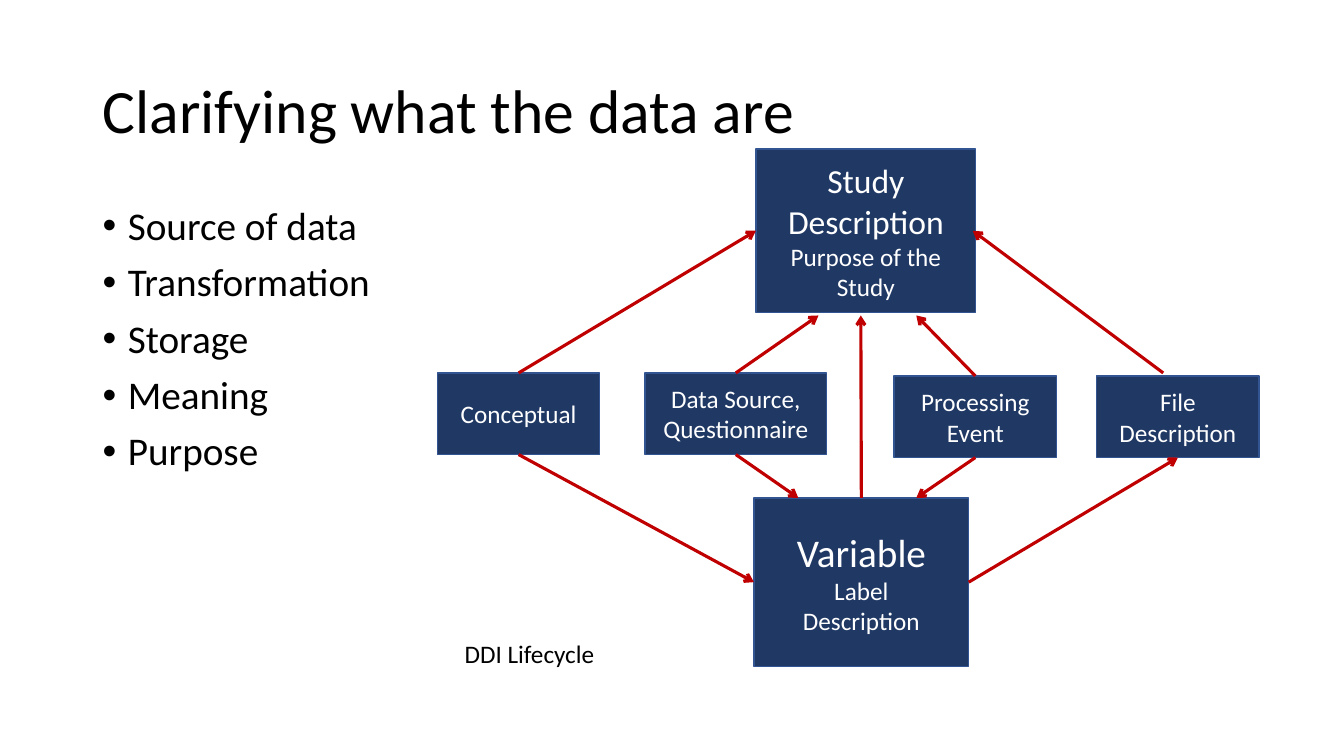
from dataclasses import dataclass
from typing import NamedTuple

from lxml import etree
from pptx import Presentation
from pptx.dml.color import RGBColor
from pptx.enum.shapes import MSO_CONNECTOR, MSO_SHAPE
from pptx.enum.text import MSO_ANCHOR, MSO_AUTO_SIZE, PP_ALIGN
from pptx.oxml.ns import qn
from pptx.util import Inches, Pt

RECTANGLE = MSO_SHAPE.RECTANGLE
STRAIGHT = MSO_CONNECTOR.STRAIGHT
TOP_ANCHOR, MIDDLE_ANCHOR = MSO_ANCHOR.TOP, MSO_ANCHOR.MIDDLE
CENTER, LEFT_ALIGN = PP_ALIGN.CENTER, PP_ALIGN.LEFT
FIT_SHAPE = MSO_AUTO_SIZE.SHAPE_TO_FIT_TEXT
TOP, LEFT, BOTTOM, RIGHT = range(4)

SLIDE_WIDTH, SLIDE_HEIGHT = Inches(13.333), Inches(7.5)


@dataclass(frozen=True)
class Theme:
    font: str = "Calibri"
    ink: RGBColor = RGBColor(0x00, 0x00, 0x00)
    box_ink: RGBColor = RGBColor(0xFF, 0xFF, 0xFF)
    box_fill: RGBColor = RGBColor(0x20, 0x38, 0x64)
    box_edge: RGBColor = RGBColor(0x32, 0x54, 0x91)
    arrow: RGBColor = RGBColor(0xC0, 0x00, 0x00)
    title_size: int = 44
    body_size: int = 28
    heading_size: int = 24
    label_size: int = 18
    edge_width: float = 1
    arrow_width: float = 2.25


THEME = Theme()


class Area(NamedTuple):
    """Left, top, width and height in percent of the slide."""
    left: float
    top: float
    width: float
    height: float


class Line(NamedTuple):
    text: str
    size: int = THEME.label_size


class Box(NamedTuple):
    area: Area
    lines: list[Line]


class Point(NamedTuple):
    """A free arrow end in percent of the slide."""
    x: float
    y: float


class Joint(NamedTuple):
    """An arrow end at the middle of a box side."""
    box: str
    side: int


class Arrow(NamedTuple):
    start: Point | Joint
    end: Point | Joint


# Diagram: four middle boxes between the study and the variable
LEFT_ROW, RIGHT_ROW = 49.33, 49.73
BOX_WIDTH, BOX_HEIGHT = 12.08, 10.8
UNDER_STUDY, VARIABLE_TOP, STUDY_MIDDLE = 41.73, 65.87, 30.53

BOXES = {
    "variable": Box(Area(56.1, VARIABLE_TOP, 15.98, 22.27),
                    [Line("Variable", THEME.body_size), Line("Label"), Line("Description")]),
    "study": Box(Area(56.25, 19.73, 16.35, 21.6),
                 [Line("Study Description", THEME.heading_size), Line("Purpose of the Study")]),
    "conceptual": Box(Area(32.55, LEFT_ROW, BOX_WIDTH, BOX_HEIGHT), [Line("Conceptual")]),
    "source": Box(Area(48, LEFT_ROW, 13.5, BOX_HEIGHT), [Line("Data Source, Questionnaire")]),
    "processing": Box(Area(66.53, RIGHT_ROW, BOX_WIDTH, BOX_HEIGHT), [Line("Processing Event")]),
    "file": Box(Area(81.6, RIGHT_ROW, BOX_WIDTH, BOX_HEIGHT), [Line("File Description")]),
}

ARROWS = [
    Arrow(Joint("conceptual", TOP), Joint("study", LEFT)),
    Arrow(Joint("source", TOP), Point(60.9, UNDER_STUDY)),
    Arrow(Joint("variable", TOP), Point(64.05, UNDER_STUDY)),
    Arrow(Joint("processing", TOP), Point(68.18, UNDER_STUDY)),
    Arrow(Point(86.55, LEFT_ROW), Point(72.38, STUDY_MIDDLE)),
    Arrow(Joint("conceptual", BOTTOM), Joint("variable", LEFT)),
    Arrow(Joint("source", BOTTOM), Point(59.4, VARIABLE_TOP)),
    Arrow(Joint("processing", BOTTOM), Point(68.18, VARIABLE_TOP)),
    Arrow(Joint("variable", RIGHT), Joint("file", BOTTOM)),
]

TOPICS = ["Source of data", "Transformation", "Storage", "Meaning", "Purpose"]


def across(percent: float) -> int:
    return round(SLIDE_WIDTH * percent / 100)


def down(percent: float) -> int:
    return round(SLIDE_HEIGHT * percent / 100)


def place(area: Area) -> tuple[int, int, int, int]:
    return across(area.left), down(area.top), across(area.width), down(area.height)


def write_lines(frame, lines: list[Line], color: RGBColor, align=LEFT_ALIGN) -> None:
    for index, line in enumerate(lines):
        para = frame.paragraphs[0] if index == 0 else frame.add_paragraph()
        para.text = line.text
        para.alignment = align
        para.font.name = THEME.font
        para.font.size = Pt(line.size)
        para.font.color.rgb = color


def add_text(page, area: Area, lines: list[Line], anchor=TOP_ANCHOR, wrap: bool = True):
    frame = page.shapes.add_textbox(*place(area)).text_frame
    frame.word_wrap = wrap
    frame.vertical_anchor = anchor
    write_lines(frame, lines, THEME.ink)
    return frame


def add_bullet(para) -> None:
    para.space_before = Pt(10)
    properties = para._p.get_or_add_pPr()
    properties.set("marL", str(Inches(0.25)))
    properties.set("indent", str(-Inches(0.25)))
    etree.SubElement(properties, qn("a:buFont")).set("typeface", "Arial")
    etree.SubElement(properties, qn("a:buChar")).set("char", "•")


def add_box(page, box: Box):
    shape = page.shapes.add_shape(RECTANGLE, *place(box.area))
    shape.shadow.inherit = False
    shape.fill.solid()
    shape.fill.fore_color.rgb = THEME.box_fill
    shape.line.color.rgb = THEME.box_edge
    shape.line.width = Pt(THEME.edge_width)
    shape.text_frame.word_wrap = True
    shape.text_frame.vertical_anchor = MIDDLE_ANCHOR
    write_lines(shape.text_frame, box.lines, THEME.box_ink, CENTER)
    return shape


def locate(end: Point | Joint) -> tuple[int, int]:
    if isinstance(end, Point):
        return across(end.x), down(end.y)
    area = BOXES[end.box].area
    share_x, share_y = {TOP: (0.5, 0), LEFT: (0, 0.5), BOTTOM: (0.5, 1), RIGHT: (1, 0.5)}[end.side]
    return across(area.left + area.width * share_x), down(area.top + area.height * share_y)


def add_arrow(page, arrow: Arrow, shapes: dict) -> None:
    connector = page.shapes.add_connector(STRAIGHT, *locate(arrow.start), *locate(arrow.end))
    if isinstance(arrow.start, Joint):
        connector.begin_connect(shapes[arrow.start.box], arrow.start.side)
    if isinstance(arrow.end, Joint):
        connector.end_connect(shapes[arrow.end.box], arrow.end.side)
    connector.line.color.rgb = THEME.arrow
    connector.line.width = Pt(THEME.arrow_width)
    etree.SubElement(connector.line._get_or_add_ln(), qn("a:tailEnd")).set("type", "arrow")
    etree.SubElement(connector._element.spPr, qn("a:effectLst"))


def main() -> None:
    deck = Presentation()
    deck.slide_width, deck.slide_height = SLIDE_WIDTH, SLIDE_HEIGHT
    page = deck.slides.add_slide(deck.slide_layouts[6])

    # Title and topics
    title = add_text(page, Area(6.9, 5.33, 86.25, 19.33),
                     [Line("Clarifying what the data are", THEME.title_size)], MIDDLE_ANCHOR)
    topics = add_text(page, Area(6.9, 26.67, 29.85, 63.47),
                      [Line(topic, THEME.body_size) for topic in TOPICS])
    for para in title.paragraphs + topics.paragraphs:
        para.line_spacing = 0.9
    for para in topics.paragraphs:
        add_bullet(para)

    # Boxes and arrows
    shapes = {name: add_box(page, box) for name, box in BOXES.items()}
    for arrow in ARROWS:
        add_arrow(page, arrow, shapes)

    # Caption
    caption = add_text(page, Area(33.83, 83.73, 11.33, 5.33), [Line("DDI Lifecycle")], wrap=False)
    caption.auto_size = FIT_SHAPE

    deck.save("out.pptx")


if __name__ == "__main__":
    main()
